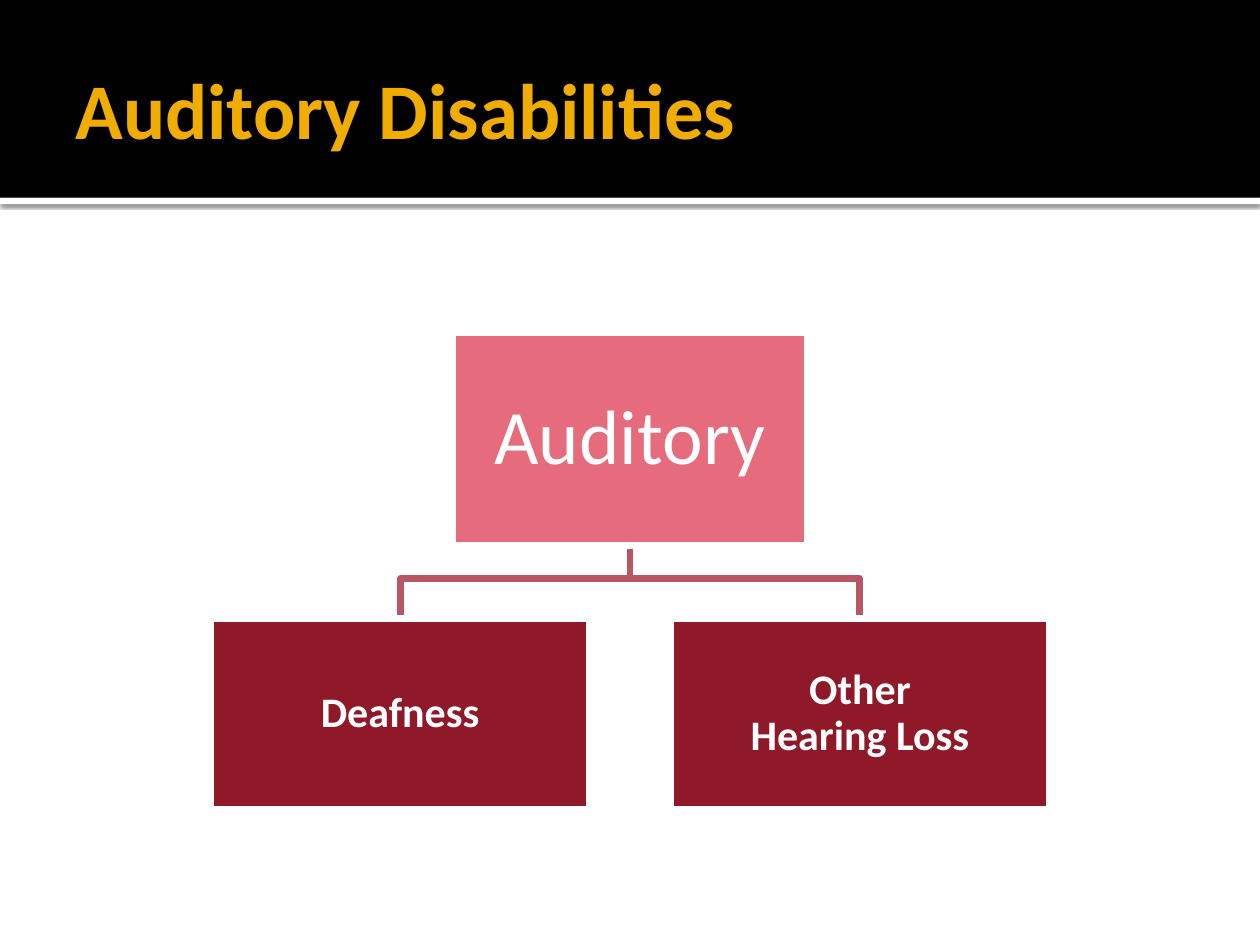
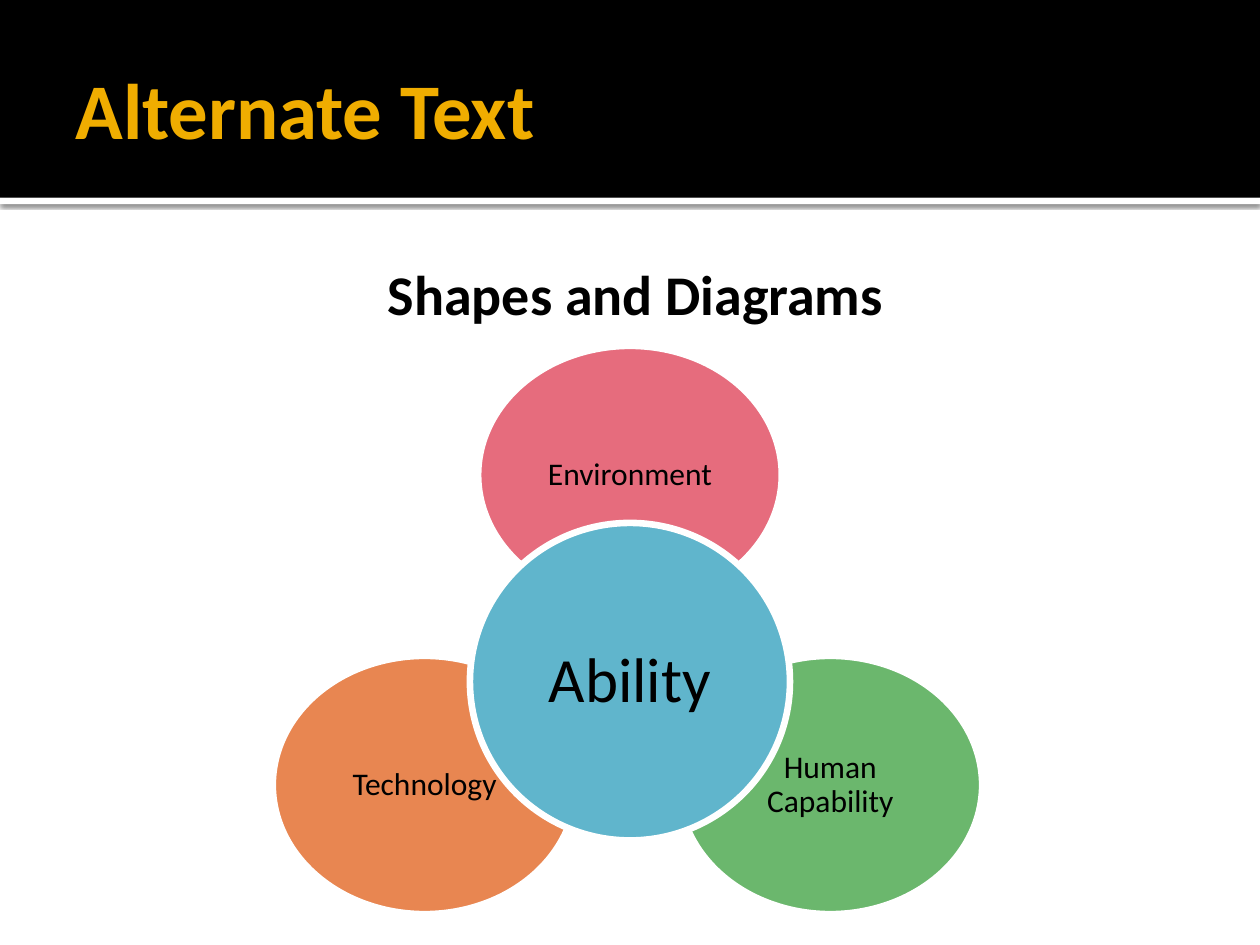
"""Build two slides: an auditory disability tree and a cluster of ability factors."""
from lxml import etree
from pptx import Presentation
from pptx import util as u
from pptx.dml.color import RGBColor
from pptx.enum import shapes, text
from pptx.oxml import ns

FONT = "Calibri"
BLACK = RGBColor(0x00, 0x00, 0x00)
WHITE = RGBColor(0xFF, 0xFF, 0xFF)
GOLD = RGBColor(0xF0, 0xAD, 0x00)
PINK = RGBColor(0xE6, 0x6C, 0x7D)
CRIMSON = RGBColor(0x90, 0x19, 0x29)
ROSE = RGBColor(0xB8, 0x56, 0x64)
GREEN = RGBColor(0x6B, 0xB7, 0x6D)
ORANGE = RGBColor(0xE8, 0x86, 0x51)
BLUE = RGBColor(0x60, 0xB5, 0xCC)
LINE_WIDTH = u.Pt(3.78)
CENTER = text.PP_ALIGN.CENTER
MIDDLE = text.MSO_ANCHOR.MIDDLE


def write(shape, lines, size, color, bold, align, anchor, insets, spacing=1.0):
    """Fill a shape with one paragraph, broken into the given lines."""
    frame = shape.text_frame
    frame.word_wrap = True
    frame.vertical_anchor = anchor
    frame.margin_left, frame.margin_top, frame.margin_right, frame.margin_bottom = map(u.Inches, insets)
    paragraph = frame.paragraphs[0]
    paragraph.alignment = align
    paragraph.line_spacing = spacing
    for index, line in enumerate(lines):
        if index:
            paragraph.add_line_break()
        run = paragraph.add_run()
        run.text = line
        run.font.name = FONT
        run.font.size = u.Pt(size)
        run.font.bold = bold
        run.font.color.rgb = color


def add_filled(slide, kind, left, top, width, height, fill, outline=None):
    """Add a preset shape with a plain fill and an optional outline."""
    shape = slide.shapes.add_shape(kind, *map(u.Inches, (left, top, width, height)))
    shape.shadow.inherit = False
    shape.fill.solid()
    shape.fill.fore_color.rgb = fill
    if outline is None:
        shape.line.fill.background()
    else:
        shape.line.color.rgb = outline
        shape.line.width = LINE_WIDTH
    return shape


RECTANGLE = shapes.MSO_SHAPE.RECTANGLE
OVAL = shapes.MSO_SHAPE.OVAL

presentation = Presentation()
presentation.slide_width = u.Inches(10)
presentation.slide_height = u.Inches(7.5)

slides = []
for title in ("Auditory Disabilities", "Alternate Text"):
    slide = presentation.slides.add_slide(presentation.slide_layouts[6])
    strip = add_filled(slide, RECTANGLE, 0, 1.57, 10, 0.05, WHITE)
    effects = strip._element.spPr.find(ns.qn("a:effectLst"))
    shadow = etree.SubElement(effects, ns.qn("a:outerShdw"), blurRad=str(u.Pt(2.5)),
                              dist=str(u.Pt(0.8)), dir="5400000", algn="tl", rotWithShape="0")
    shadow_color = etree.SubElement(shadow, ns.qn("a:srgbClr"), val="000000")
    etree.SubElement(shadow_color, ns.qn("a:alpha"), val="60000")
    add_filled(slide, RECTANGLE, 0, 0, 10, 1.57, BLACK)
    title_box = slide.shapes.add_textbox(*map(u.Inches, (0.5, 0.17, 9, 1.37)))
    write(title_box, [title], 45, GOLD, True, text.PP_ALIGN.LEFT, MIDDLE, (0.1, 0.05, 0.05, 0.05))
    slides.append(slide)

tree_slide, ability_slide = slides

for child_center in (6.82, 3.18):
    builder = tree_slide.shapes.build_freeform(u.Inches(5), u.Inches(4.28))
    corners = ((5, 4.59), (child_center, 4.59), (child_center, 4.91))
    builder.add_line_segments([(u.Inches(x), u.Inches(y)) for x, y in corners], close=False)
    branch = builder.convert_to_shape()
    branch.shadow.inherit = False
    branch.fill.background()
    branch.line.color.rgb = ROSE
    branch.line.width = LINE_WIDTH

tree_boxes = (
    (["Deafness"], 1.67, 4.91, 3.01, 1.51, CRIMSON, 24, True, 0.03),
    (["Other", "Hearing Loss"], 5.32, 4.91, 3.01, 1.51, CRIMSON, 24, True, 0.03),
    (["Auditory"], 3.59, 2.64, 2.82, 1.69, PINK, 44, False, 0.18),
)
for lines, left, top, width, height, fill, size, bold, inset in tree_boxes:
    box = add_filled(tree_slide, RECTANGLE, left, top, width, height, fill, WHITE)
    write(box, lines, size, WHITE, bold, CENTER, MIDDLE, [inset] * 4, 0.9)

subtitle_box = ability_slide.shapes.add_textbox(*map(u.Inches, (0.5, 1.96, 9, 0.75)))
write(subtitle_box, ["Shapes and Diagrams"], 32, BLACK, True, CENTER, text.MSO_ANCHOR.TOP,
      (0.19, 0.1, 0.1, 0.05))

ability_ovals = (
    ("Environment", 5, 3.77, 2.41, 2.05, PINK, 18),
    ("Human Capability", 6.59, 6.23, 2.41, 2.05, GREEN, 18),
    ("Technology", 3.37, 6.23, 2.41, 2.05, ORANGE, 18),
    ("Ability", 5, 5.41, 2.54, 2.52, BLUE, 36),
)
for label, center_x, center_y, width, height, fill, size in ability_ovals:
    oval = add_filled(ability_slide, OVAL, center_x - width / 2, center_y - height / 2,
                      width, height, fill, WHITE)
    write(oval, [label], size, BLACK, False, CENTER, MIDDLE, [0.06] * 4, 0.9)

presentation.save("out.pptx")
